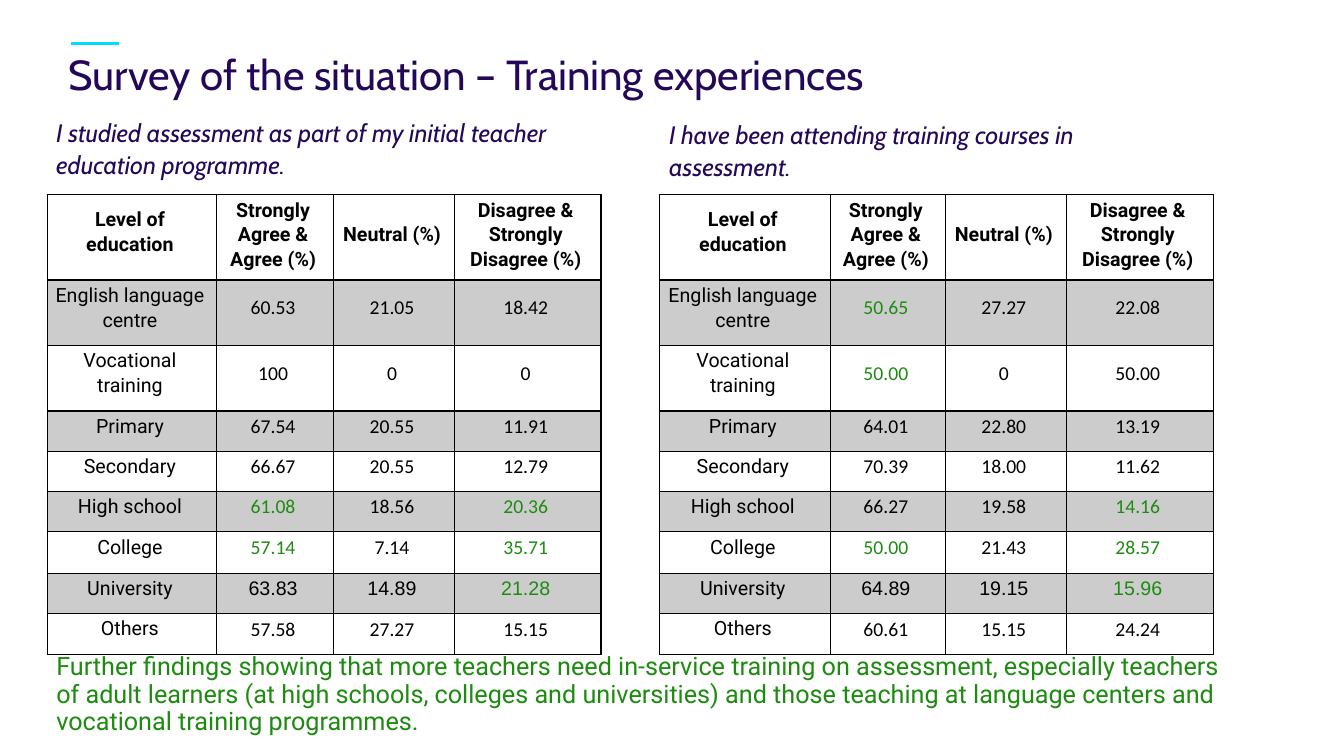
from pptx import Presentation
from pptx.dml.color import RGBColor
from pptx.enum.shapes import MSO_CONNECTOR
from pptx.enum.text import MSO_ANCHOR, PP_ALIGN
from pptx.oxml.ns import qn
from pptx.util import Pt
from lxml.etree import SubElement

BLACK = RGBColor(0x00, 0x00, 0x00)
GREEN = RGBColor(0x1D, 0x8B, 0x10)
PURPLE = RGBColor(0x23, 0x08, 0x59)
CYAN = RGBColor(0x00, 0xDC, 0xFF)

HEADER = ["Level of education", "Strongly Agree & Agree (%)", "Neutral (%)",
          "Disagree & Strongly Disagree (%)"]
ROW_HEIGHTS = [60, 45.7, 45.7, 28.5, 28.5, 28, 29.8, 28, 28.5]
HEADER_INSETS = (0, 1.44, 2.88, 5.76)
CELL_INSETS = (4.32, 1.44, 7.2, 9.36)

INITIAL_TRAINING = [
    ["English language centre", "60.53", "21.05", "18.42"],
    ["Vocational training", "100", "0", "0"],
    ["Primary", "67.54", "20.55", "11.91"],
    ["Secondary", "66.67", "20.55", "12.79"],
    ["High school", "61.08", "18.56", "20.36"],
    ["College", "57.14", "7.14", "35.71"],
    ["University", "63.83", "14.89", "21.28"],
    ["Others", "57.58", "27.27", "15.15"],
]
INITIAL_GREEN = {(5, 1), (5, 3), (6, 1), (6, 3), (7, 3)}

COURSES = [
    ["English language centre", "50.65", "27.27", "22.08"],
    ["Vocational training", "50.00", "0", "50.00"],
    ["Primary", "64.01", "22.80", "13.19"],
    ["Secondary", "70.39", "18.00", "11.62"],
    ["High school", "66.27", "19.58", "14.16"],
    ["College", "50.00", "21.43", "28.57"],
    ["University", "64.89", "19.15", "15.96"],
    ["Others", "60.61", "15.15", "24.24"],
]
COURSES_GREEN = {(1, 1), (2, 1), (5, 3), (6, 1), (6, 3), (7, 3)}


def style_text(p, font, size, color, spacing, bold=False, italic=False):
    p.line_spacing = spacing
    for r in p.runs:
        r.font.name = font
        r.font.size = Pt(size)
        r.font.color.rgb = color
        r.font.bold = bold
        r.font.italic = italic


def set_insets(target, insets):
    (target.margin_left, target.margin_top,
     target.margin_right, target.margin_bottom) = map(Pt, insets)


def add_text(s, box, text, anchor=MSO_ANCHOR.TOP, insets=None, **style):
    tf = s.shapes.add_textbox(*map(Pt, box)).text_frame
    tf.word_wrap = True
    tf.vertical_anchor = anchor
    if insets:
        set_insets(tf, insets)
    tf.text = text
    style_text(tf.paragraphs[0], **style)


def set_borders(cell, **widths):
    tc_pr = cell._tc.get_or_add_tcPr()
    for side in "LRTB":
        ln = SubElement(tc_pr, qn(f"a:ln{side}"), w=str(Pt(widths.get(side, 1))))
        fill = SubElement(ln, qn("a:solidFill"))
        SubElement(fill, qn("a:srgbClr"), val=str(BLACK))


def shade(cell):
    """Fill the cell with black at 20 % opacity."""
    cell.fill.solid()
    cell.fill.fore_color.rgb = BLACK
    color = cell._tc.tcPr.find(qn("a:solidFill")).find(qn("a:srgbClr"))
    SubElement(color, qn("a:alpha"), val="20000")


def fill_cell(cell, text, row, col, color):
    header = row == 0
    set_insets(cell, HEADER_INSETS if header and col else CELL_INSETS)
    cell.vertical_anchor = MSO_ANCHOR.MIDDLE
    set_borders(cell, B=2 if header else 1, T=2 if row == 1 else 1)
    if row % 2:
        shade(cell)
    else:
        cell.fill.background()
    if header or col == 0:
        font = "Roboto"
    else:
        font = "Arial" if row == 7 else "Calibri"
    cell.text_frame.text = text
    p = cell.text_frame.paragraphs[0]
    p.alignment = PP_ALIGN.CENTER
    style_text(p, font, 14, color, 1.07, bold=header)


def add_survey_table(s, left, top, widths, answers, green):
    rows = [HEADER] + answers
    frame = s.shapes.add_table(len(rows), len(HEADER), Pt(left), Pt(top),
                               Pt(sum(widths)), Pt(sum(ROW_HEIGHTS)))
    table = frame.table
    table.first_row = table.horz_banding = False
    for column, width in zip(table.columns, widths):
        column.width = Pt(width)
    for row, height in zip(table.rows, ROW_HEIGHTS):
        row.height = Pt(height)
    for i, texts in enumerate(rows):
        for j, text in enumerate(texts):
            color = GREEN if (i, j) in green else BLACK
            fill_cell(table.cell(i, j), text, i, j, color)


def add_question(s, box, text):
    add_text(s, box, text, MSO_ANCHOR.MIDDLE, font="Cabin", size=18,
             color=PURPLE, spacing=1.07, italic=True)


def add_title(s, left, top, width, height):
    accent_y = Pt(top - 6.5)
    accent = s.shapes.add_connector(MSO_CONNECTOR.STRAIGHT, Pt(left + 2),
                                    accent_y, Pt(left + 36), accent_y)
    accent.line.color.rgb = CYAN
    accent.line.width = Pt(2.4)
    SubElement(accent._element.spPr, qn("a:effectLst"))
    add_text(s, (left, top, width, height),
             "Survey of the situation – Training experiences",
             insets=(0, 0, 0, 0), font="Cabin", size=30, color=PURPLE,
             spacing=Pt(33))


def add_findings(s, box):
    add_text(s, box,
             "Further findings showing that more teachers need in-service "
             "training on assessment, especially teachers of adult learners "
             "(at high schools, colleges and universities) and those teaching "
             "at language centers and vocational training programmes.",
             font="Roboto", size=18, color=GREEN, spacing=0.9)


def main():
    prs = Presentation()
    prs.slide_width, prs.slide_height = Pt(960), Pt(540)
    s = prs.slides.add_slide(prs.slide_layouts[6])
    add_title(s, 49, 37.5, 862, 42.5)
    add_survey_table(s, 33.8, 139, (121, 83.5, 86.4, 104.6),
                     INITIAL_TRAINING, INITIAL_GREEN)
    add_question(s, (33.1, 45.4, 396, 120),
                 "I studied assessment as part of my initial teacher "
                 "education programme.")
    add_survey_table(s, 471, 139, (122.2, 82.1, 86.4, 105),
                     COURSES, COURSES_GREEN)
    add_question(s, (470.9, 37.5, 361.5, 138),
                 "I have been attending training courses in assessment.")
    add_findings(s, (33.1, 463.7, 862, 69))
    prs.save("out.pptx")


if __name__ == "__main__":
    main()
